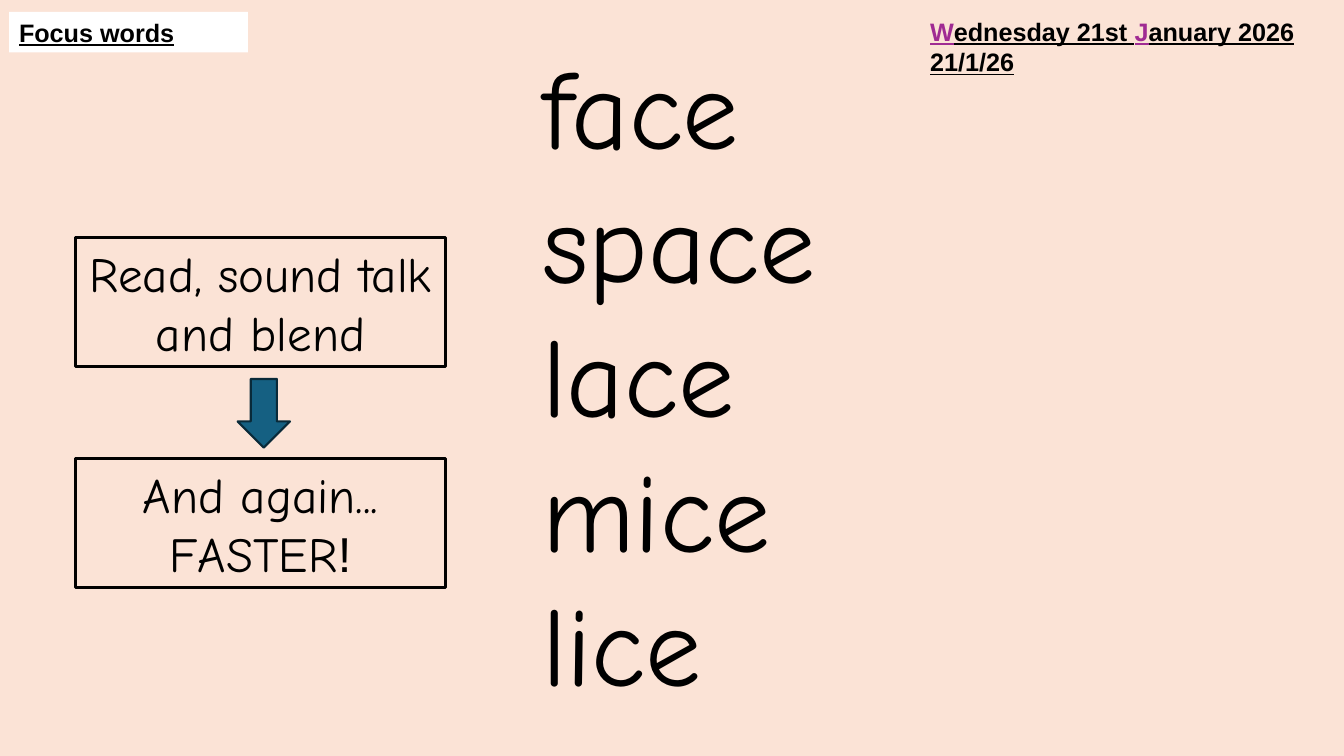
from pptx import Presentation
from pptx.dml.color import RGBColor
from pptx.enum.shapes import MSO_SHAPE as Preset
from pptx.enum.text import MSO_AUTO_SIZE as AutoSize, PP_ALIGN as Align
from pptx.util import Cm, Pt

COLOURS = {
    "peach": "FBE3D6",
    "white": "FFFFFF",
    "black": "000000",
    "purple": "A02B93",
    "teal": "156082",
    "navy": "092A39",
}
HEADING_FONT = "Arial"
WORD_FONT = "Comic Neue"
FOCUS_WORDS = ["face", "space", "lace", "mice", "lice"]
DATE_LINES = [
    [("W", "purple"), ("ednesday 21st ", "black"),
     ("J", "purple"), ("anuary 2026", "black")],
    [("21/1/26", "black")],
]
PROMPT_LEFT, PROMPT_WIDTH, PROMPT_HEIGHT = 1.91, 9.32, 3.25
PROMPTS = [
    (5.99, [("Read, sound talk and blend", WORD_FONT)]),
    (11.56, [("And again... FASTER", WORD_FONT), ("!", HEADING_FONT)]),
]


def rgb(colour):
    """Look up a named colour."""
    return RGBColor.from_string(COLOURS[colour])


def add_run(paragraph, text, size, font, colour="black", heading=False):
    """Add one styled run; headings are bold and underlined."""
    run = paragraph.add_run()
    run.text = text
    run.font.size = Pt(size)
    run.font.name = font
    run.font.color.rgb = rgb(colour)
    if heading:
        run.font.bold = True
        run.font.underline = True


def add_panel(slide, preset, box, fill=None, line=None, line_width=2.25):
    """Add a flat preset shape with optional fill and outline."""
    panel = slide.shapes.add_shape(preset, *map(Cm, box))
    panel.shadow.inherit = False
    if fill:
        panel.fill.solid()
        panel.fill.fore_color.rgb = rgb(fill)
    else:
        panel.fill.background()
    if line:
        panel.line.color.rgb = rgb(line)
        panel.line.width = Pt(line_width)
    else:
        panel.line.fill.background()
    return panel


def fit_text(frame):
    """Wrap the text and let its shape grow with it."""
    frame.word_wrap = True
    frame.auto_size = AutoSize.SHAPE_TO_FIT_TEXT


def add_lines(slide, box, lines, size, font, heading=False):
    """Add a text box with one paragraph per line of coloured runs."""
    frame = slide.shapes.add_textbox(*map(Cm, box)).text_frame
    fit_text(frame)
    for index, line in enumerate(lines):
        paragraph = frame.add_paragraph() if index else frame.paragraphs[0]
        for text, colour in line:
            add_run(paragraph, text, size, font, colour, heading)


def add_title(slide):
    """Add the white title label."""
    title = add_panel(slide, Preset.RECTANGLE, (0.23, 0.3, 6.02, 1.02), "white")
    fit_text(title.text_frame)
    paragraph = title.text_frame.paragraphs[0]
    paragraph.alignment = Align.LEFT
    add_run(paragraph, "Focus words", 18, HEADING_FONT, heading=True)


def add_prompt(slide, top, parts):
    """Add an outlined reading instruction."""
    box = (PROMPT_LEFT, top, PROMPT_WIDTH, PROMPT_HEIGHT)
    prompt = add_panel(slide, Preset.RECTANGLE, box, line="black")
    fit_text(prompt.text_frame)
    paragraph = prompt.text_frame.paragraphs[0]
    paragraph.alignment = Align.CENTER
    for text, font in parts:
        add_run(paragraph, text, 35, font)


def main():
    """Build and save the focus words slide."""
    deck = Presentation()
    deck.slide_width, deck.slide_height = Cm(33.87), Cm(19.05)
    slide = deck.slides.add_slide(deck.slide_layouts[6])
    slide.background.fill.solid()
    slide.background.fill.fore_color.rgb = rgb("peach")

    add_title(slide)
    word_lines = [[(word, "black")] for word in FOCUS_WORDS]
    add_lines(slide, (13.41, 0.81, 25.15, 17.35), word_lines, 80, WORD_FONT)
    for top, parts in PROMPTS:
        add_prompt(slide, top, parts)
    add_panel(slide, Preset.DOWN_ARROW, (5.99, 9.55, 1.32, 1.73),
              "teal", "navy", 1.5)
    add_lines(slide, (23.19, 0.28, 10.62, 1.8), DATE_LINES, 18,
              HEADING_FONT, heading=True)
    deck.save("out.pptx")


if __name__ == "__main__":
    main()
